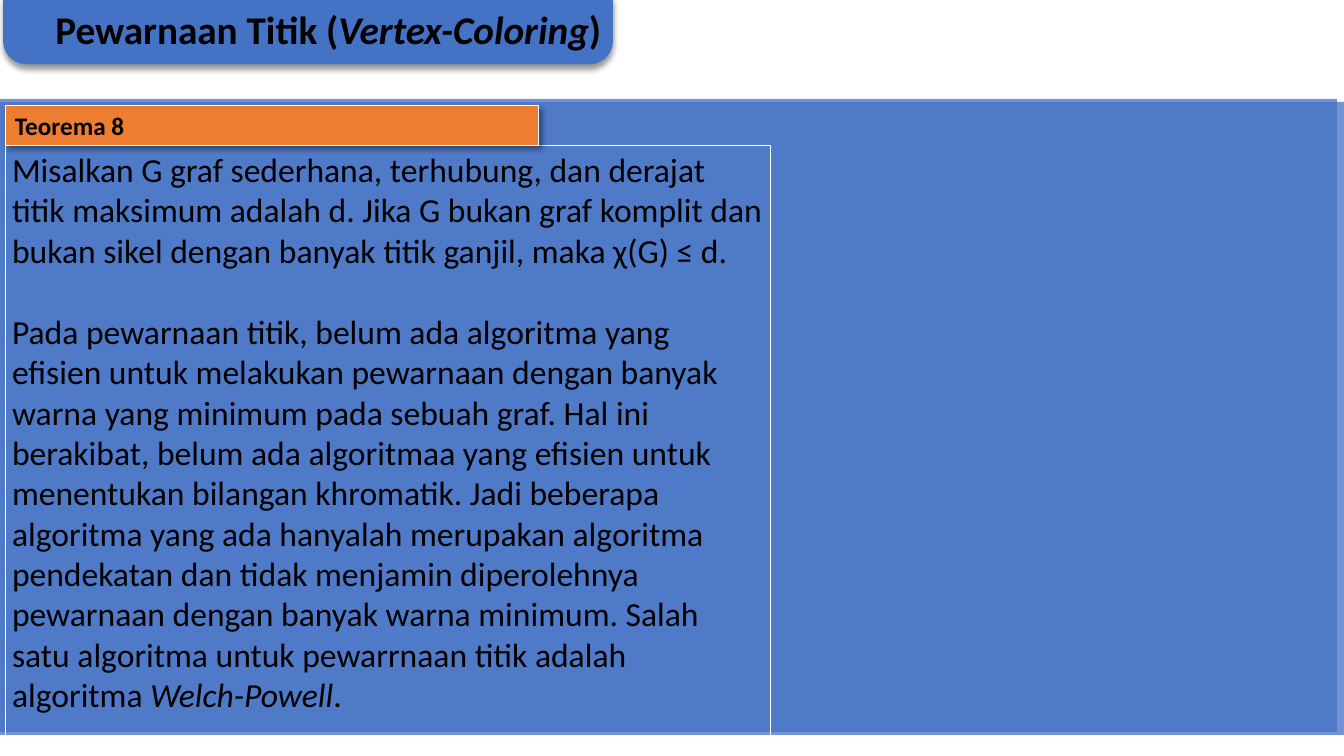
from lxml.etree import SubElement
from pptx import Presentation
from pptx.dml.color import RGBColor
from pptx.enum.shapes import MSO_SHAPE
from pptx.enum.text import MSO_ANCHOR, MSO_AUTO_SIZE, PP_ALIGN
from pptx.oxml.ns import qn
from pptx.util import Pt

BLUE = RGBColor(0x44, 0x72, 0xC4)
ORANGE = RGBColor(0xED, 0x7D, 0x31)
WHITE = RGBColor(0xFF, 0xFF, 0xFF)
BLACK = RGBColor(0, 0, 0)

# Each paragraph is a list of (text, italic) runs.
TITLE = [[("Pewarnaan Titik (", False), ("Vertex-Coloring", True), (")", False)]]
LABEL = [[("Teorema 8", False)]]
BODY = [
    [("Misalkan G graf sederhana, terhubung, dan derajat titik maksimum "
      "adalah d. Jika G bukan graf komplit dan bukan sikel dengan banyak "
      "titik ganjil, maka χ(G) ≤ d.", False)],
    [("Pada pewarnaan titik, belum ada algoritma yang efisien untuk "
      "melakukan pewarnaan dengan banyak warna yang minimum pada sebuah "
      "graf. Hal ini berakibat, belum ada algoritmaa yang efisien untuk "
      "menentukan bilangan khromatik. Jadi beberapa algoritma yang ada "
      "hanyalah merupakan algoritma pendekatan dan tidak menjamin "
      "diperolehnya pewarnaan dengan banyak warna minimum. Salah satu "
      "algoritma untuk pewarrnaan titik adalah algoritma ", False),
     ("Welch-Powell", True), (".", False)],
]

WIDE, HIGH = 960, 540
PANEL = 452.2
PANELS = [(0, 72.7), (-5, 70.6)]
LEFT = 3.6
LABEL_TOP, LABEL_HIGH = 75.2, 29
BODY_GAP = 29.3

TITLE_FORM = dict(size=Pt(28), bold=True)
LABEL_FORM = dict(size=Pt(18), bold=True)
BODY_FORM = dict(size=Pt(24), bold=False)
INSETS = dict(margin_left=Pt(5), margin_right=Pt(5),
              margin_top=Pt(2.2), margin_bottom=Pt(2.2))


def add_box(kind, left, top, wide, high, fill=None, line=None):
    box = slide.shapes.add_shape(kind, Pt(left), Pt(top), Pt(wide), Pt(high))
    box.shadow.inherit = False
    if fill is None:
        box.fill.background()
    else:
        box.fill.solid()
        box.fill.fore_color.rgb = fill
    if line is None:
        box.line.fill.background()
    else:
        box.line.color.rgb = line
        box.line.width = Pt(0.75)
    return box


def set_alpha(color, share):
    SubElement(color, qn("a:alpha"), val=str(share * 1000))


def add_shade(box, angle):
    """Give the box a soft black shadow cast at the angle in degrees."""
    effects = box._element.spPr.find(qn("a:effectLst"))
    shade = SubElement(effects, qn("a:outerShdw"), blurRad=str(Pt(4)),
                       dist=str(Pt(3)), dir=str(angle * 60000),
                       rotWithShape="0")
    set_alpha(SubElement(shade, qn("a:srgbClr"), val="000000"), 40)


def write(box, paras, form, align=PP_ALIGN.LEFT, gap=0):
    frame = box.text_frame
    frame.word_wrap = True
    frame.auto_size = MSO_AUTO_SIZE.NONE
    frame.vertical_anchor = MSO_ANCHOR.TOP
    for i, runs in enumerate(paras):
        para = frame.add_paragraph() if i else frame.paragraphs[0]
        para.alignment = align
        para.line_spacing = 1.0
        para.space_before = Pt(gap if i else 0)
        for text, slant in runs:
            run = para.add_run()
            run.text = text
            run.font.color.rgb = BLACK
            for key, value in dict(form, name="Calibri", italic=slant).items():
                setattr(run.font, key, value)


deck = Presentation()
deck.slide_width, deck.slide_height = Pt(WIDE), Pt(HIGH)
slide = deck.slides.add_slide(deck.slide_layouts[5])
title = slide.shapes.title


def add_panel(left, top):
    panel = add_box(MSO_SHAPE.RECTANGLE, left, top, WIDE, PANEL, BLUE)
    set_alpha(panel._element.spPr.find(".//" + qn("a:srgbClr")), 75)


add_panel(*PANELS[0])

banner = add_box(MSO_SHAPE.ROUND_2_SAME_RECTANGLE, 2.2, -2.2, 435.6, 48.2, BLUE)
banner.adjustments[0], banner.adjustments[1] = 0, 0.35
add_shade(banner, 90)

title.left, title.top, title.width, title.height = Pt(-5), Pt(0), Pt(443), Pt(41)
title.text_frame.margin_left = Pt(43.2)
write(title, TITLE, TITLE_FORM, PP_ALIGN.CENTER)
banner._element.addnext(title._element)

add_panel(*PANELS[1])

body = add_box(MSO_SHAPE.RECTANGLE, LEFT, LABEL_TOP + LABEL_HIGH,
               546.5, 470.2, line=WHITE)
for side, inset in INSETS.items():
    setattr(body.text_frame, side, inset)
write(body, BODY, BODY_FORM, gap=BODY_GAP)

label = add_box(MSO_SHAPE.RECTANGLE, LEFT, LABEL_TOP, 381, LABEL_HIGH,
                ORANGE, WHITE)
add_shade(label, 45)
write(label, LABEL, LABEL_FORM)

deck.save("out.pptx")
